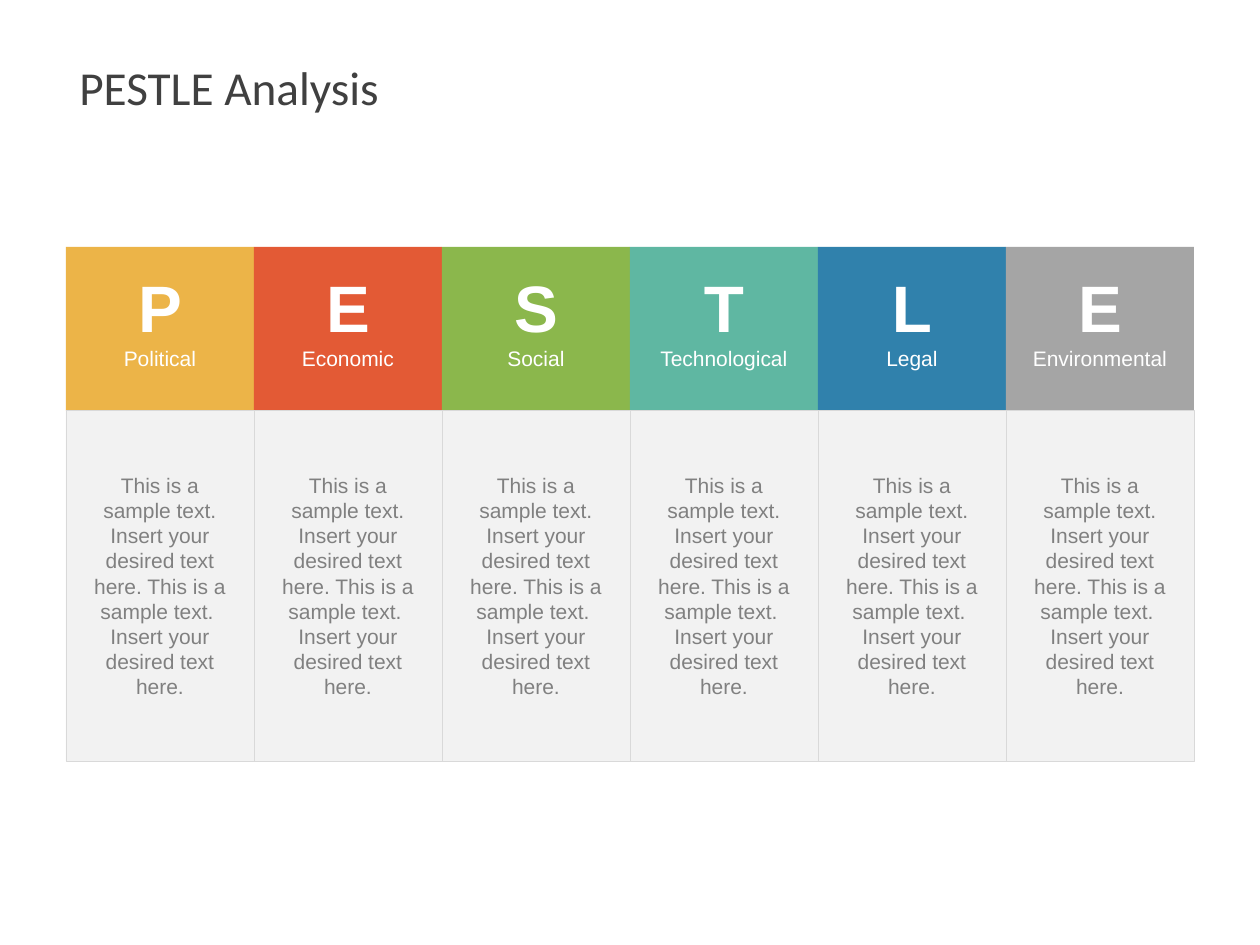
from pptx import Presentation
from pptx.dml.color import RGBColor
from pptx.enum.shapes import MSO_SHAPE
from pptx.enum.text import MSO_ANCHOR, PP_ALIGN
from pptx.util import Cm, Pt

WHITE = RGBColor(0xFF, 0xFF, 0xFF)
TITLE_GREY = RGBColor(0x40, 0x40, 0x40)
TEXT_GREY = RGBColor(0x80, 0x80, 0x80)
PANEL_GREY = RGBColor(0xF2, 0xF2, 0xF2)
BORDER_GREY = RGBColor(0xD9, 0xD9, 0xD9)
AMBER = RGBColor(0xEC, 0xB4, 0x48)
ORANGE = RGBColor(0xE3, 0x5A, 0x35)
GREEN = RGBColor(0x8B, 0xB7, 0x4C)
TEAL = RGBColor(0x5F, 0xB7, 0xA2)
BLUE = RGBColor(0x30, 0x81, 0xAC)
GREY = RGBColor(0xA5, 0xA5, 0xA5)

FACTORS = [
    ("Political", AMBER),
    ("Economic", ORANGE),
    ("Social", GREEN),
    ("Technological", TEAL),
    ("Legal", BLUE),
    ("Environmental", GREY),
]
SAMPLE_TEXT = (
    "This is a sample text. Insert your desired text here. "
    "This is a sample text.  Insert your desired text here."
)

PAGE_WIDTH, PAGE_HEIGHT = Cm(25.4), Cm(19.05)
COLUMN_WIDTH = Cm(3.79)
HEADER_HEIGHT = Cm(3.3)


def write(para, text, *, size, color, font="Arial", bold=False, align=PP_ALIGN.CENTER):
    para.alignment = align
    span = para.add_run()
    span.text = text
    span.font.name = font
    span.font.size = Pt(size)
    span.font.bold = bold
    span.font.color.rgb = color


def set_frame(frame, left, top, right, bottom):
    """Wrap the text, centre it vertically and set its margins in cm."""
    frame.word_wrap = True
    frame.vertical_anchor = MSO_ANCHOR.MIDDLE
    frame.margin_left, frame.margin_top = Cm(left), Cm(top)
    frame.margin_right, frame.margin_bottom = Cm(right), Cm(bottom)


def add_panel(page, left, top, width, height, fill, border=None):
    panel = page.shapes.add_shape(MSO_SHAPE.RECTANGLE, left, top, width, height)
    panel.shadow.inherit = False
    panel.fill.solid()
    panel.fill.fore_color.rgb = fill
    if border is None:
        panel.line.fill.background()
    else:
        panel.line.color.rgb = border
        panel.line.width = Pt(0.25)
    return panel


def add_title(page, left, top, width, height):
    frame = page.shapes.add_textbox(left, top, width, height).text_frame
    set_frame(frame, 0.33, 0.18, 0.33, 0.18)
    write(frame.paragraphs[0], "PESTLE Analysis", size=27, color=TITLE_GREY,
          font="Calibri", align=PP_ALIGN.LEFT)


def add_header(page, left, top, width, height, name, color):
    frame = add_panel(page, left, top, width, height, color).text_frame
    set_frame(frame, 0.25, 0, 0.25, 0.41)
    write(frame.paragraphs[0], name[0], size=37.5, color=WHITE, bold=True)
    write(frame.add_paragraph(), name, size=12, color=WHITE)


def add_description(page, left, top, width, height):
    frame = add_panel(page, left, top, width, height, PANEL_GREY, BORDER_GREY).text_frame
    set_frame(frame, 0.38, 0.13, 0.38, 0.13)
    write(frame.paragraphs[0], SAMPLE_TEXT, size=12, color=TEXT_GREY)


def add_factor_grid(page, left, top, width, height):
    column_width = width // len(FACTORS)
    columns = [left + i * column_width for i in range(len(FACTORS))]
    for x, (name, color) in zip(columns, FACTORS):
        add_header(page, x, top, column_width, HEADER_HEIGHT, name, color)
    for x in columns:
        add_description(page, x, top + HEADER_HEIGHT, column_width, height - HEADER_HEIGHT)


def main():
    deck = Presentation()
    deck.slide_width, deck.slide_height = PAGE_WIDTH, PAGE_HEIGHT
    page = deck.slides.add_slide(deck.slide_layouts[6])
    add_title(page, Cm(1.27), Cm(0.76), Cm(22.86), Cm(1.98))
    grid_width = COLUMN_WIDTH * len(FACTORS)
    add_factor_grid(page, (PAGE_WIDTH - grid_width) // 2, Cm(4.98), grid_width, Cm(10.36))
    deck.save("out.pptx")


if __name__ == "__main__":
    main()
